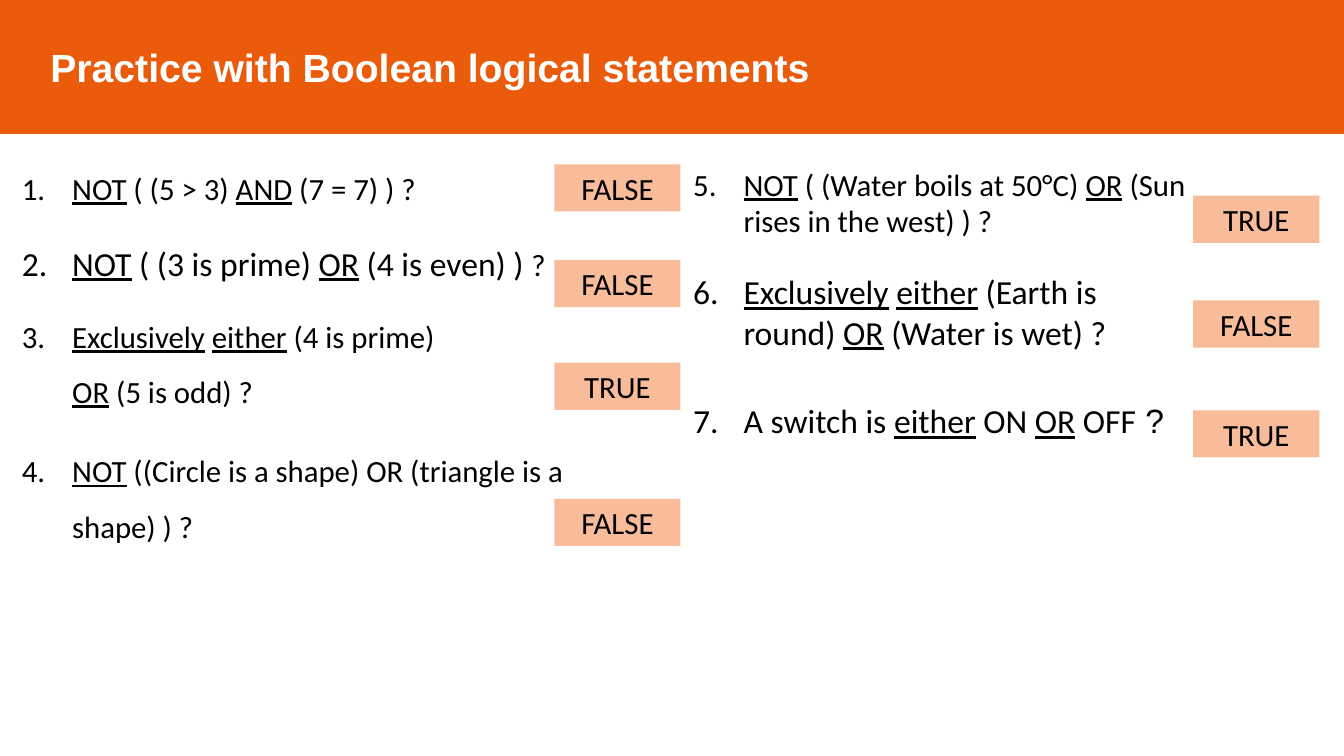
"""Build a slide of Boolean logic questions with their answers."""
from dataclasses import dataclass

from lxml.etree import SubElement
from pptx import Presentation
from pptx.dml.color import RGBColor
from pptx.enum.shapes import MSO_SHAPE
from pptx.enum.text import MSO_ANCHOR, PP_ALIGN
from pptx.oxml.ns import qn
from pptx.util import Cm, Pt

COLORS = {"banner": "EA5B0C", "answer": "F9BC9A", "title": "FFFFFF", "text": "000000"}


@dataclass
class Question:
    wording: str
    size: int = 22
    gap: float = 0
    tail: str = ""
    tail_size: int = 22
    tail_font: str = "Calibri"


LEFT_QUESTIONS = [
    Question("_NOT_ ( (5 > 3) _AND_ (7 = 7) ) ?"),
    Question("_NOT_ ( (3 is prime) _OR_ (4 is even) ) ", 24, 11.5, "?"),
    Question("_Exclusively_ _either_ (4 is prime)\n_OR_ (5 is odd) ?", gap=11.5),
    Question("_NOT_ ((Circle is a shape) OR (triangle is a shape) ) ?", gap=17),
]
RIGHT_QUESTIONS = [
    Question("_NOT_ ( (Water boils at 50°C) _OR_ (Sun rises in the west) ) ?"),
    Question("_Exclusively_ _either_ (Earth is round) _OR_ (Water is wet) ?", 24, 23),
    Question("A switch is _either_ ON _OR_ OFF", 24, 34.5, " ?", 24, "Arial"),
]
ANSWERS = {
    13.97: [(4.14, "FALSE"), (6.55, "FALSE"), (9.14, "TRUE"), (12.57, "FALSE")],
    30.07: [(4.93, "TRUE"), (7.57, "FALSE"), (10.34, "TRUE")],
}


def add_run(paragraph, text, size, color="text", font="Calibri", bold=False, underline=False):
    run = paragraph.add_run()
    run.text = text
    run.font.name = font
    run.font.size = Pt(size)
    run.font.bold = bold
    run.font.underline = underline
    run.font.color.rgb = RGBColor.from_string(COLORS[color])


def add_block(slide, left, top, width, height, color):
    block = slide.shapes.add_shape(
        MSO_SHAPE.RECTANGLE, Cm(left), Cm(top), Cm(width), Cm(height))
    block.shadow.inherit = False
    block.fill.solid()
    block.fill.fore_color.rgb = RGBColor.from_string(COLORS[color])
    block.line.fill.background()
    block.text_frame.vertical_anchor = MSO_ANCHOR.MIDDLE
    return block


def add_banner(slide, title):
    banner = add_block(slide, 0, 0, 33.87, 3.35, "banner")
    banner.line.color.rgb = RGBColor.from_string(COLORS["banner"])
    banner.line.width = Pt(1)
    heading = banner.text_frame.paragraphs[0]
    heading.alignment = PP_ALIGN.LEFT
    heading._p.get_or_add_pPr().set("marL", str(Cm(1.02)))
    add_run(heading, title, 28, "title", "Arial", bold=True)


def add_answer(slide, left, top, verdict):
    answer = add_block(slide, left, top, 3.18, 1.19, "answer")
    label = answer.text_frame.paragraphs[0]
    label.alignment = PP_ALIGN.CENTER
    add_run(label, verdict, 22)


def number_paragraph(paragraph, start):
    properties = paragraph._p.get_or_add_pPr()
    properties.set("marL", str(Cm(1.27)))
    properties.set("indent", str(-Cm(1.27)))
    numbering = SubElement(properties, qn("a:buAutoNum"), type="arabicPeriod")
    if start > 1:
        numbering.set("startAt", str(start))


def write_question(paragraph, question):
    for line_index, line in enumerate(question.wording.split("\n")):
        if line_index:
            paragraph.add_line_break()
        for part_index, part in enumerate(line.split("_")):
            if part:
                add_run(paragraph, part, question.size, underline=part_index % 2 == 1)
    if question.tail:
        add_run(paragraph, question.tail, question.tail_size, font=question.tail_font)


def add_questions(slide, left, top, width, height, questions, start, spacing):
    column = slide.shapes.add_textbox(Cm(left), Cm(top), Cm(width), Cm(height)).text_frame
    column.word_wrap = True
    for index, question in enumerate(questions):
        paragraph = column.add_paragraph() if index else column.paragraphs[0]
        number_paragraph(paragraph, start)
        paragraph.line_spacing = spacing
        if question.gap:
            paragraph.space_before = Pt(question.gap)
        write_question(paragraph, question)


def main():
    deck = Presentation()
    deck.slide_width, deck.slide_height = Cm(33.87), Cm(19.05)
    slide = deck.slides.add_slide(deck.slide_layouts[6])
    add_banner(slide, "Practice with Boolean logical statements")
    add_questions(slide, 0.3, 3.68, 14.33, 10.77, LEFT_QUESTIONS, 1, 1.5)
    add_questions(slide, 17.22, 4.04, 13.03, 9.14, RIGHT_QUESTIONS, 5, 1.0)
    for left, verdicts in ANSWERS.items():
        for top, verdict in verdicts:
            add_answer(slide, left, top, verdict)
    deck.save("out.pptx")


if __name__ == "__main__":
    main()
